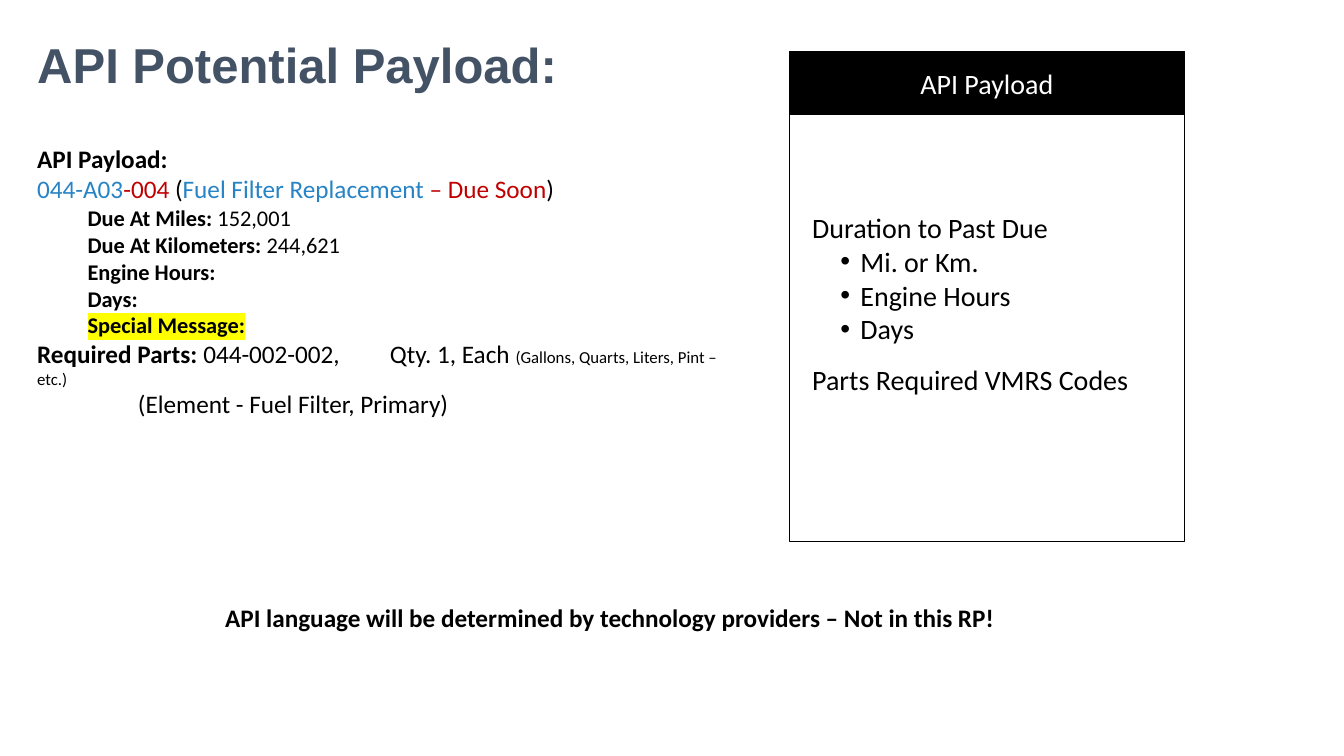
import pptx
import pptx.util
import pptx.dml.color
import pptx.enum.shapes
import pptx.enum.text
import pptx.oxml
import pptx.oxml.ns

PX = 9525  # EMU in one px, 96 px to the inch
ALIGN = pptx.enum.text.PP_ALIGN
ANCHOR = pptx.enum.text.MSO_ANCHOR
THEME = {
    "head": "Arial", "body": "Calibri",
    "black": "000000", "white": "FFFFFF", "slate": "435265",
    "blue": "2683C6", "red": "C00000", "yellow": "FFFF00",
    "title": 35, "large": 20, "text": 18, "item": 16, "small": 12,
}


def color(name):
    return pptx.dml.color.RGBColor.from_string(THEME[name])


def write(frame, runs, first=False, left=0, hang=0, bullet=None, tab=None,
          before=0, align=ALIGN.LEFT, lines=None, font="body"):
    """Add a paragraph; each run is (text, size, color, bold, highlight)."""
    para = frame.paragraphs[0] if first else frame.add_paragraph()
    props = para._p.get_or_add_pPr()
    props.set("marL", str(left * PX))
    props.set("indent", str(hang * PX))
    make = pptx.oxml.ns.qn
    if bullet:
        face = props.makeelement(make("a:buFont"), {"typeface": "Arial"})
        mark = props.makeelement(make("a:buChar"), {"char": bullet})
        props.extend([face, mark])
    if tab:
        stops = props.makeelement(make("a:tabLst"), {})
        stops.append(props.makeelement(
            make("a:tab"), {"pos": str(tab * PX), "algn": "l"}))
        props.append(stops)
    para.alignment = align
    para.space_before = pptx.util.Pt(before)
    if lines:
        para.line_spacing = lines
    for text, size, tint, bold, glow in runs:
        run = para.add_run()
        run.text = text
        run.font.size = pptx.util.Pt(THEME[size])
        run.font.bold = bold
        run.font.name = THEME[font]
        run.font.color.rgb = color(tint)
        if glow:
            light = props.makeelement(make("a:highlight"), {})
            light.append(props.makeelement(
                make("a:srgbClr"), {"val": THEME[glow]}))
            run._r.rPr.find(make("a:solidFill")).addnext(light)


def panel(x, y, w, h, fill=None, anchor=ANCHOR.TOP):
    """Add a text box, or a black-edged rectangle when fill is given."""
    area = [n * PX for n in (x, y, w, h)]
    if fill:
        shape = slide.shapes.add_shape(
            pptx.enum.shapes.MSO_SHAPE.RECTANGLE, *area)
        shape.shadow.inherit = False
        shape.fill.solid()
        shape.fill.fore_color.rgb = color(fill)
        shape.line.color.rgb = color("black")
        shape.line.width = pptx.util.Pt(1)
    else:
        shape = slide.shapes.add_textbox(*area)
    shape.text_frame.word_wrap = True
    shape.text_frame.vertical_anchor = anchor
    return shape.text_frame


deck = pptx.Presentation()
deck.slide_width, deck.slide_height = 1280 * PX, 720 * PX
slide = deck.slides.add_slide(deck.slide_layouts[6])

# Title
title = panel(26, 14, 1152, 101, anchor=ANCHOR.MIDDLE)
write(title, [("API Potential Payload:", "title", "slate", True, None)],
      first=True, lines=0.9, font="head")

# Payload card
card = panel(752, 94, 376, 422, fill="white", anchor=ANCHOR.MIDDLE)
card.margin_bottom = 37 * PX
write(card, [("Duration to Past Due", "large", "black", False, None)],
      first=True, left=12)
for unit in ("Mi. or Km.", "Engine Hours", "Days"):
    write(card, [(unit, "large", "black", False, None)],
          left=58, hang=-19, bullet="•")
write(card, [("Parts Required VMRS Codes", "large", "black", False, None)],
      left=12, before=12)

# Card header
header = panel(752, 49, 376, 60, fill="black", anchor=ANCHOR.MIDDLE)
write(header, [("API Payload", "large", "white", False, None)],
      first=True, align=ALIGN.CENTER)

# Sample payload
sample = panel(26, 132, 685, 284)
write(sample, [("API Payload:", "text", "black", True, None)], first=True)
code = [("044-A03", "blue"), ("-004", "red"), (" (", "black"),
        ("Fuel Filter Replacement ", "blue"), ("– Due Soon", "red"),
        (")", "black")]
write(sample, [(text, "text", tint, False, None) for text, tint in code])
fields = [("Due At Miles: ", "152,001", None),
          ("Due At Kilometers: ", "244,621", None),
          ("Engine Hours:", "", None), ("Days:", "", None),
          ("Special Message:", "", "yellow")]
for label, value, glow in fields:
    runs = [(label, "item", "black", True, glow)]
    if value:
        runs.append((value, "item", "black", False, None))
    write(sample, runs, left=48)
write(sample, [("Required Parts: ", "text", "black", True, None),
               ("044-002-002,\tQty. 1, Each ", "text", "black", False, None),
               ("(Gallons, Quarts, Liters, Pint – etc.)", "small", "black",
                False, None)], tab=310)
write(sample, [("(Element - Fuel Filter, Primary)", "text", "black", False,
                None)], left=96)

# Closing note
note = panel(205, 569, 935, 38)
write(note, [("API language will be determined by technology providers "
              "– Not in this RP!", "text", "black", True, None)], first=True)

deck.save("out.pptx")
